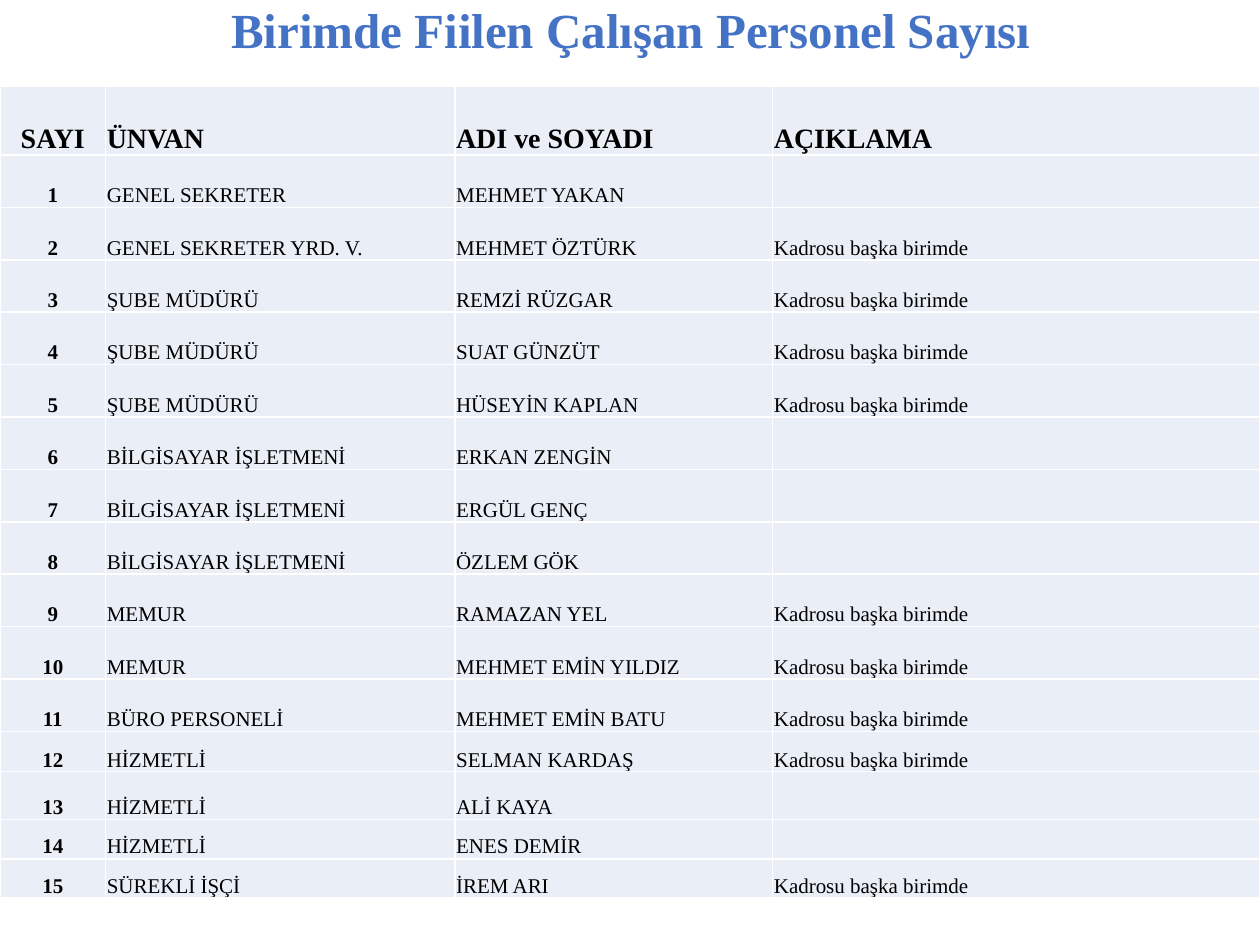
"""Build a slide listing the staff who actually work in the unit."""
from pptx import Presentation
from pptx.dml.color import RGBColor
from pptx.enum.text import MSO_ANCHOR as Anchor, PP_ALIGN as Align
from pptx.util import Pt

TITLE = "Birimde Fiilen Çalışan Personel Sayısı"
HEADS = ("SAYI", "ÜNVAN", "ADI ve SOYADI", "AÇIKLAMA")
NOTE = "Kadrosu başka birimde"
STAFF = [
    ("GENEL SEKRETER", "MEHMET YAKAN", ""),
    ("GENEL SEKRETER YRD. V.", "MEHMET ÖZTÜRK", NOTE),
    ("ŞUBE MÜDÜRÜ", "REMZİ RÜZGAR", NOTE),
    ("ŞUBE MÜDÜRÜ", "SUAT GÜNZÜT", NOTE),
    ("ŞUBE MÜDÜRÜ", "HÜSEYİN KAPLAN", NOTE),
    ("BİLGİSAYAR İŞLETMENİ", "ERKAN ZENGİN", ""),
    ("BİLGİSAYAR İŞLETMENİ", "ERGÜL GENÇ", ""),
    ("BİLGİSAYAR İŞLETMENİ", "ÖZLEM GÖK", ""),
    ("MEMUR", "RAMAZAN YEL", NOTE),
    ("MEMUR", "MEHMET EMİN YILDIZ", NOTE),
    ("BÜRO PERSONELİ", "MEHMET EMİN BATU", NOTE),
    ("HİZMETLİ", "SELMAN KARDAŞ", NOTE),
    ("HİZMETLİ", "ALİ KAYA", ""),
    ("HİZMETLİ", "ENES DEMİR", ""),
    ("SÜREKLİ İŞÇİ", "İREM ARI", NOTE),
]
WIDTHS = (60.4, 199.6, 181.6, 278.4)
HEIGHTS = [39.6] + [29.95] * 11 + [23.1, 27.4, 22.3, 22.3]
TOP = 49
FACE = "Times New Roman"


def color(code):
    return RGBColor.from_string(code)


def style(para, size, bold, code, align):
    para.alignment = align
    font = para.font
    font.name, font.size, font.bold = FACE, Pt(size), bold
    font.color.rgb = color(code)


def add_list(slide, rows, heights, top):
    frame = slide.shapes.add_table(
        len(rows), len(WIDTHS), 0, Pt(top), Pt(sum(WIDTHS)), Pt(sum(heights)))
    table = frame.table
    table.first_row = table.horz_banding = False
    for col, width in zip(table.columns, WIDTHS):
        col.width = Pt(width)
    for line, height, row in zip(table.rows, heights, rows):
        line.height = Pt(height)
        head = row == HEADS
        for index, (cell, text) in enumerate(zip(line.cells, row)):
            cell.text = text
            cell.fill.solid()
            cell.fill.fore_color.rgb = color("EAEFF7")
            cell.vertical_anchor = Anchor.BOTTOM
            cell.margin_left = cell.margin_right = cell.margin_top = Pt(0.7)
            cell.margin_bottom = 0
            first = index == 0
            style(cell.text_frame.paragraphs[0], 16 if head else 12,
                  head or first, "000000", Align.CENTER if first else Align.LEFT)


def main():
    deck = Presentation()
    deck.slide_width, deck.slide_height = Pt(720), Pt(540)
    slide = deck.slides.add_slide(deck.slide_layouts[5])

    rows = [HEADS] + [(str(num), *who) for num, who in enumerate(STAFF, 1)]
    add_list(slide, rows[:-1], HEIGHTS[:-1], TOP)
    add_list(slide, rows[-1:], HEIGHTS[-1:], TOP + sum(HEIGHTS[:-1]))

    title = slide.shapes.title
    title.left, title.top, title.width, title.height = Pt(36.5), 0, Pt(648), Pt(37.5)
    title.text = TITLE
    title.text_frame.vertical_anchor = Anchor.MIDDLE
    para = title.text_frame.paragraphs[0]
    para.line_spacing = 0.9
    style(para, 28, True, "4472C4", Align.CENTER)

    deck.save("out.pptx")


if __name__ == "__main__":
    main()
